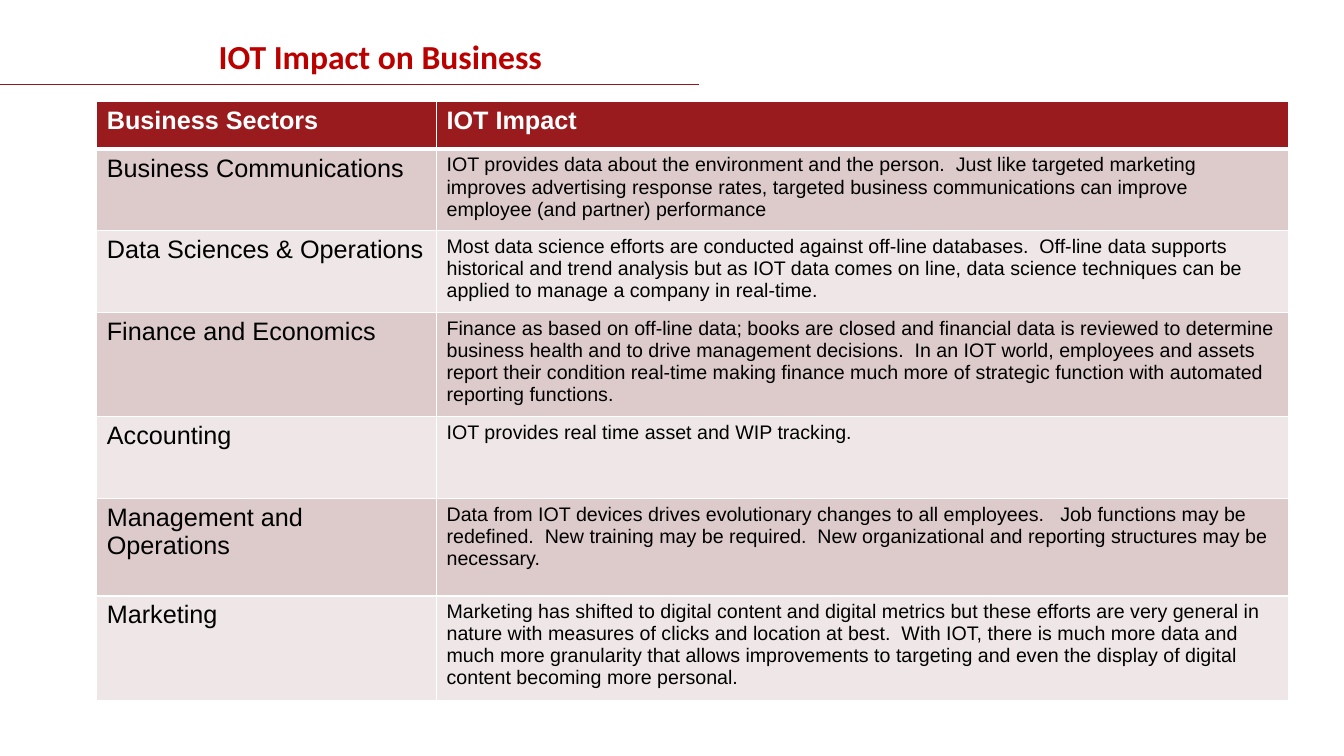
"""Build a slide with a table of how IOT affects business sectors."""
from lxml.etree import SubElement
from pptx import Presentation
from pptx.dml.color import RGBColor
from pptx.enum.shapes import MSO_CONNECTOR
from pptx.oxml.ns import qn
from pptx.util import Inches, Pt

COLORS = {
    "title": "BB0000",
    "rule": "98161A",
    "header": "991B1E",
    "dark_band": "DDCBCB",
    "light_band": "EFE7E7",
    "white": "FFFFFF",
    "black": "000000",
}
COLUMN_WIDTHS = [3.37, 8.45]
ROW_HEIGHTS = [0.47, 0.81, 0.81, 0.97, 0.81, 0.97, 0.97]
IMPACTS = [
    ("Business Sectors", "IOT Impact"),
    ("Business Communications",
     "IOT provides data about the environment and the person.  Just like targeted "
     "marketing improves advertising response rates, targeted business communications "
     "can improve employee (and partner) performance"),
    ("Data Sciences & Operations",
     "Most data science efforts are conducted against off-line databases.  Off-line "
     "data supports historical and trend analysis but as IOT data comes on line, data "
     "science techniques can be applied to manage a company in real-time."),
    ("Finance and Economics",
     "Finance as based on off-line data; books are closed and financial data is "
     "reviewed to determine business health and to drive management decisions.  In an "
     "IOT world, employees and assets report their condition real-time making finance "
     "much more of strategic function with automated reporting functions."),
    ("Accounting", "IOT provides real time asset and WIP tracking."),
    ("Management and Operations",
     "Data from IOT devices drives evolutionary changes to all employees.   Job "
     "functions may be redefined.  New training may be required.  New organizational "
     "and reporting structures may be necessary."),
    ("Marketing",
     "Marketing has shifted to digital content and digital metrics but these efforts "
     "are very general in nature with measures of clicks and location at best.  With "
     "IOT, there is much more data and much more granularity that allows improvements "
     "to targeting and even the display of digital content becoming more personal."),
]


def rgb(name):
    """Return the named colour."""
    return RGBColor.from_string(COLORS[name])


def write(frame, text, size=14, color="black", font="Arial", bold=False):
    """Write formatted text into the first paragraph of a frame."""
    span = frame.paragraphs[0].add_run()
    span.text = text
    span.font.size = Pt(size)
    span.font.name = font
    span.font.bold = bold
    span.font.color.rgb = rgb(color)


class SlideBuilder:
    """Hold the slide style and add elements to the current page."""

    def __init__(self, page, border="white"):
        """Keep the page and the table border colour."""
        self.page = page
        self.border = border

    def title(self, text, left, top, width, height):
        """Add the heading."""
        box = self.page.shapes.add_textbox(
            Inches(left), Inches(top), Inches(width), Inches(height))
        box.text_frame.word_wrap = True
        write(box.text_frame, text, size=24, color="title", font="Calibri", bold=True)

    def rule(self, left, right, top):
        """Add a thin horizontal line."""
        line = self.page.shapes.add_connector(
            MSO_CONNECTOR.STRAIGHT, Inches(left), Inches(top), Inches(right), Inches(top))
        line.line.color.rgb = rgb("rule")
        line.line.width = Pt(0.75)
        SubElement(line._element.spPr, qn("a:effectLst"))

    def borders(self, cell, **widths):
        """Draw cell borders with the given widths in points."""
        properties = cell._tc.get_or_add_tcPr()
        for side, width in widths.items():
            edge = SubElement(properties, qn(f"a:ln{side}"), w=str(Pt(width)))
            fill = SubElement(edge, qn("a:solidFill"))
            SubElement(fill, qn("a:srgbClr"), val=COLORS[self.border])

    def table(self, rows, left, top):
        """Add a banded table with a header row."""
        table = self.page.shapes.add_table(
            len(rows), len(COLUMN_WIDTHS), Inches(left), Inches(top),
            Inches(sum(COLUMN_WIDTHS)), Inches(sum(ROW_HEIGHTS))).table
        for column, width in zip(table.columns, COLUMN_WIDTHS):
            column.width = Inches(width)
        for index, (texts, height) in enumerate(zip(rows, ROW_HEIGHTS)):
            table.rows[index].height = Inches(height)
            header = index == 0
            band = "header" if header else "dark_band" if index % 2 else "light_band"
            for position, text in enumerate(texts):
                cell = table.cell(index, position)
                self.borders(cell, L=1, R=1, T=3 if index == 1 else 1, B=3 if header else 1)
                cell.fill.solid()
                cell.fill.fore_color.rgb = rgb(band)
                write(cell.text_frame, text, size=18 if header or position == 0 else 14,
                      color="white" if header else "black", bold=header)


def main():
    """Create and save the deck."""
    deck = Presentation()
    deck.slide_width = Inches(13.33)
    deck.slide_height = Inches(7.5)
    builder = SlideBuilder(deck.slides.add_slide(deck.slide_layouts[6]))
    builder.title("IOT Impact on Business", 2.07, 0.31, 3.44, 0.5)
    builder.rule(0, 6.93, 0.84)
    builder.table(IMPACTS, 0.96, 1.01)
    deck.save("out.pptx")


if __name__ == "__main__":
    main()
